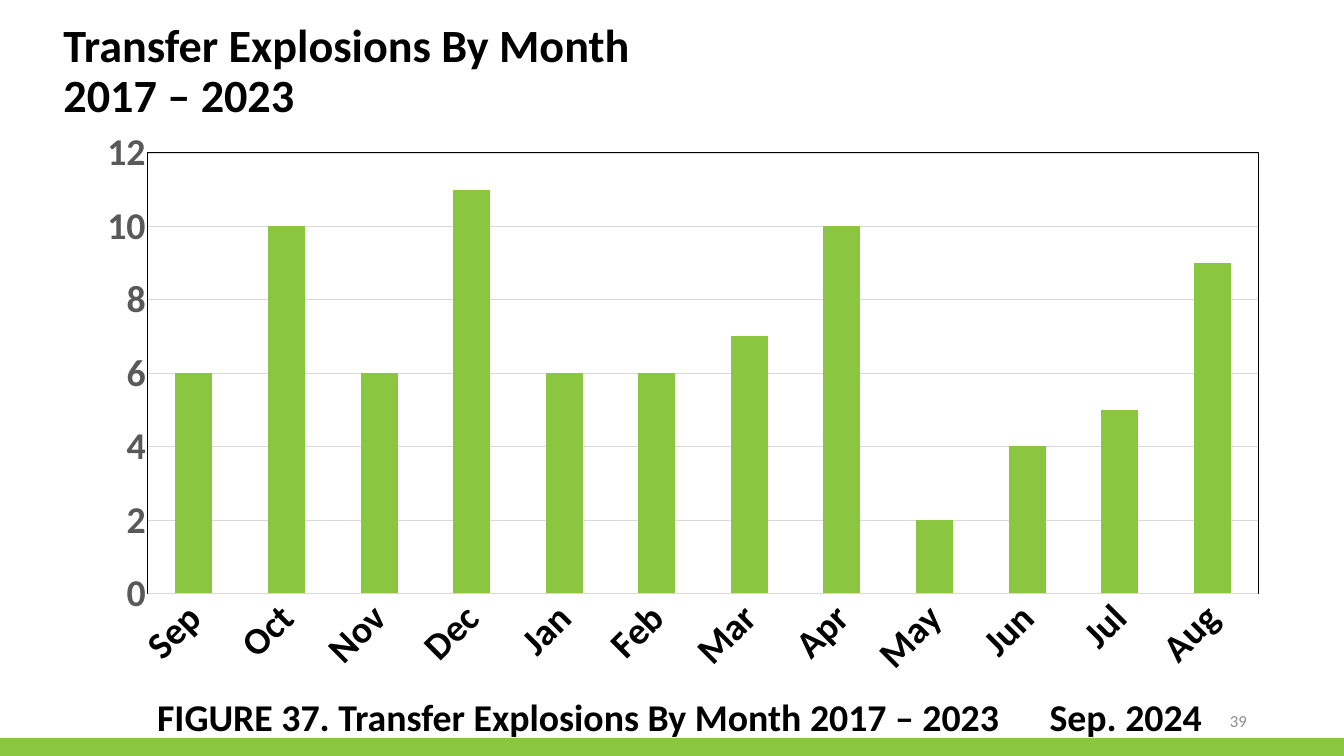
from lxml import etree
from pptx import Presentation
from pptx.chart.data import CategoryChartData as ChartData
from pptx.dml.color import RGBColor as RGB
from pptx.enum.chart import XL_CHART_TYPE as Kind, XL_TICK_MARK as Tick
from pptx.enum.shapes import MSO_SHAPE as Shape
from pptx.enum.text import MSO_ANCHOR as Anchor, PP_ALIGN as Align
from pptx.oxml import parse_xml
from pptx.oxml.ns import nsdecls, qn
from pptx.util import Inches, Pt

# Content
COLORS = {"green": "8BC641", "black": "000000", "dark": "595959",
          "gray": "8C8C8C", "grid": "D9D9D9", "white": "FFFFFF"}
FONT = "Calibri"
WIDTH, HEIGHT, BAND = 26.67, 15, 0.36
COUNTS = {"Sep": 6, "Oct": 10, "Nov": 6, "Dec": 11, "Jan": 6, "Feb": 6,
          "Mar": 7, "Apr": 10, "May": 2, "Jun": 4, "Jul": 5, "Aug": 9}
PLOT = {"x": 0.082, "y": 0.046, "w": 0.886, "h": 0.714}
TEXTS = [
    {"box": (1.16, 0.4, 18.8, 1.39), "size": 66, "bold": True, "color": "black",
     "lines": ["Transfer Explosions By Month", "2017 – 2023"],
     "format": {"line_spacing": 0.9}},
    {"box": (3.02, 13.82, 21.18, 2.11), "size": 54, "bold": True, "color": "black",
     "lines": ["FIGURE 37. Transfer Explosions By Month 2017 – 2023\tSep. 2024"],
     "format": {"line_spacing": 0.9}, "tab": 17.71},
    {"box": (18.84, 13.9, 6, 0.8), "size": 24, "bold": False, "color": "gray",
     "lines": ["39"], "format": {"alignment": Align.RIGHT}, "anchor": Anchor.MIDDLE},
]


def tint(name):
    return RGB.from_string(COLORS[name])


def style(font, size, color, bold):
    values = {"name": FONT, "size": Pt(size), "bold": bold}
    for key, value in values.items():
        setattr(font, key, value)
    font.color.rgb = tint(color)


def add_text(slide, item):
    frame = slide.shapes.add_textbox(*map(Inches, item["box"])).text_frame
    frame.word_wrap = True
    frame.vertical_anchor = item.get("anchor", Anchor.TOP)
    for i, line in enumerate(item["lines"]):
        para = frame.add_paragraph() if i else frame.paragraphs[0]
        if "tab" in item:
            tabs = etree.SubElement(para._p.get_or_add_pPr(), qn("a:tabLst"))
            etree.SubElement(tabs, qn("a:tab"), pos=str(Inches(item["tab"])), algn="l")
        for key, value in item["format"].items():
            setattr(para, key, value)
        run = para.add_run()
        run.text = line
        style(run.font, item["size"], item["color"], item["bold"])


def add_bars(slide):
    data = ChartData()
    data.categories = list(COUNTS)
    data.add_series("Series 1", list(COUNTS.values()))
    box = map(Inches, (0.89, 2.47, 24.88, 12.24))
    chart = slide.shapes.add_chart(Kind.COLUMN_CLUSTERED, *box, data).chart
    chart.has_legend = chart.has_title = False
    style(chart.font, 10, "black", False)

    # Columns
    plot = chart.plots[0]
    for key, value in {"gap_width": 150, "overlap": -27,
                       "vary_by_categories": False}.items():
        setattr(plot, key, value)
    fill = plot.series[0].format.fill
    fill.solid()
    fill.fore_color.rgb = tint("green")

    # Axes
    months, scale = chart.category_axis, chart.value_axis
    for axis, color in ((months, "black"), (scale, "dark")):
        axis.major_tick_mark = axis.minor_tick_mark = Tick.NONE
        style(axis.tick_labels.font, 54, color, True)
    months._element.txPr.find(qn("a:bodyPr")).set("rot", "-2700000")
    scale.minimum_scale, scale.maximum_scale, scale.major_unit = 0, 12, 2
    scale.has_major_gridlines = True
    scale.format.line.fill.background()
    for line in (months.format.line, scale.major_gridlines.format.line):
        line.color.rgb = tint("grid")
        line.width = Pt(0.75)

    # Plot area: fixed place, white with a black frame
    area = chart._chartSpace.chart.plotArea
    for old in area.findall(qn("c:layout")):
        area.remove(old)
    sizes = "".join(f'<c:{k} val="{v}"/>' for k, v in PLOT.items())
    area.insert(0, parse_xml(
        f'<c:layout {nsdecls("c")}><c:manualLayout><c:layoutTarget val="inner"/>'
        f'<c:xMode val="edge"/><c:yMode val="edge"/>{sizes}'
        '</c:manualLayout></c:layout>'))
    paint = '<a:solidFill><a:srgbClr val="{}"/></a:solidFill>'
    area.append(parse_xml(
        f'<c:spPr {nsdecls("c", "a")}>{paint.format(COLORS["white"])}'
        f'<a:ln w="{Pt(1.5)}">{paint.format(COLORS["black"])}</a:ln></c:spPr>'))


def main():
    deck = Presentation()
    deck.slide_width, deck.slide_height = Inches(WIDTH), Inches(HEIGHT)
    slide = deck.slides.add_slide(deck.slide_layouts[6])

    # Bottom band
    band = slide.shapes.add_shape(Shape.RECTANGLE, 0, Inches(HEIGHT - BAND),
                                  Inches(WIDTH), Inches(BAND))
    band.shadow.inherit = False
    band.fill.solid()
    band.fill.fore_color.rgb = tint("green")
    band.line.fill.background()

    # Title, caption, page number and chart
    for item in TEXTS:
        add_text(slide, item)
    add_bars(slide)
    deck.save("out.pptx")


if __name__ == "__main__":
    main()
